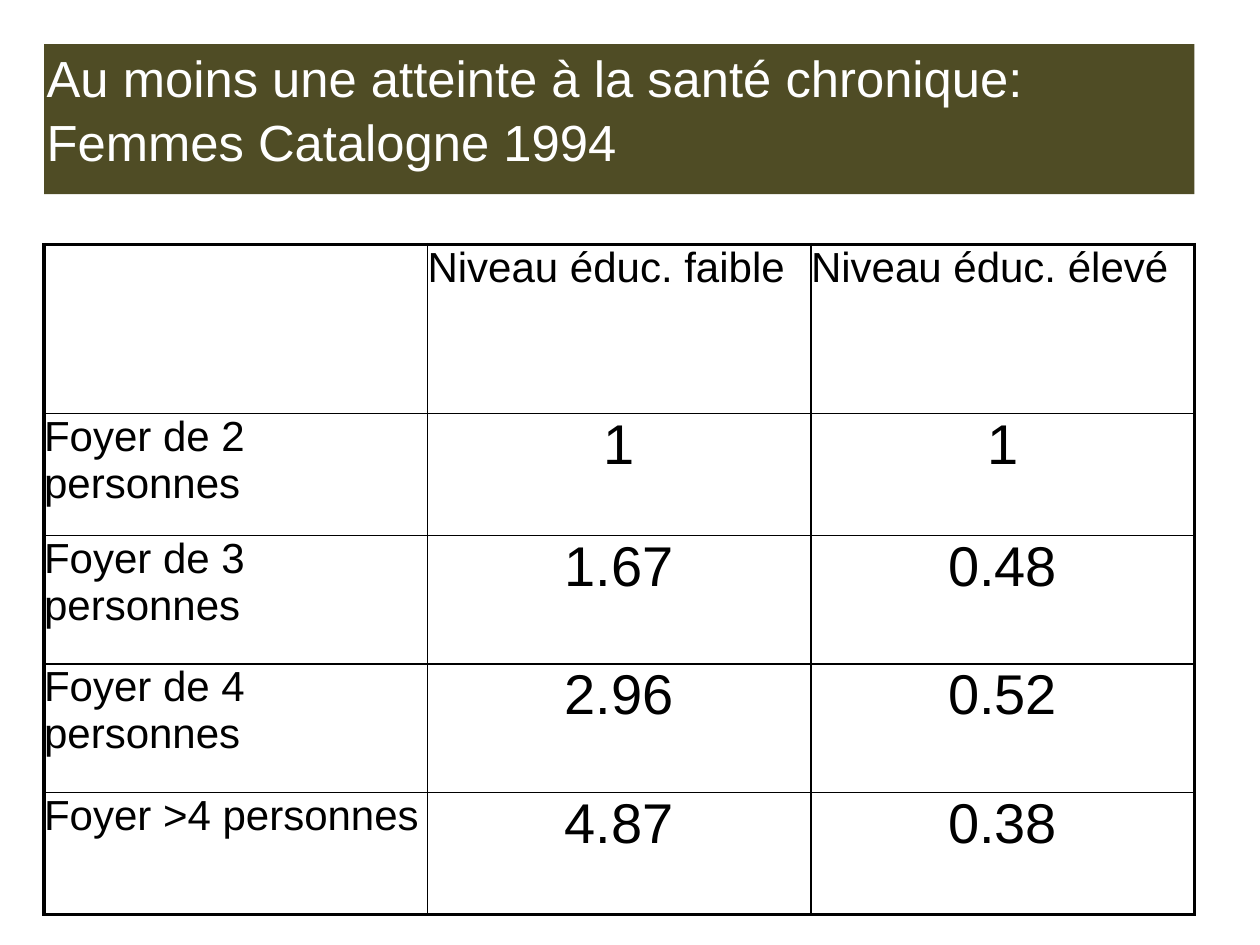
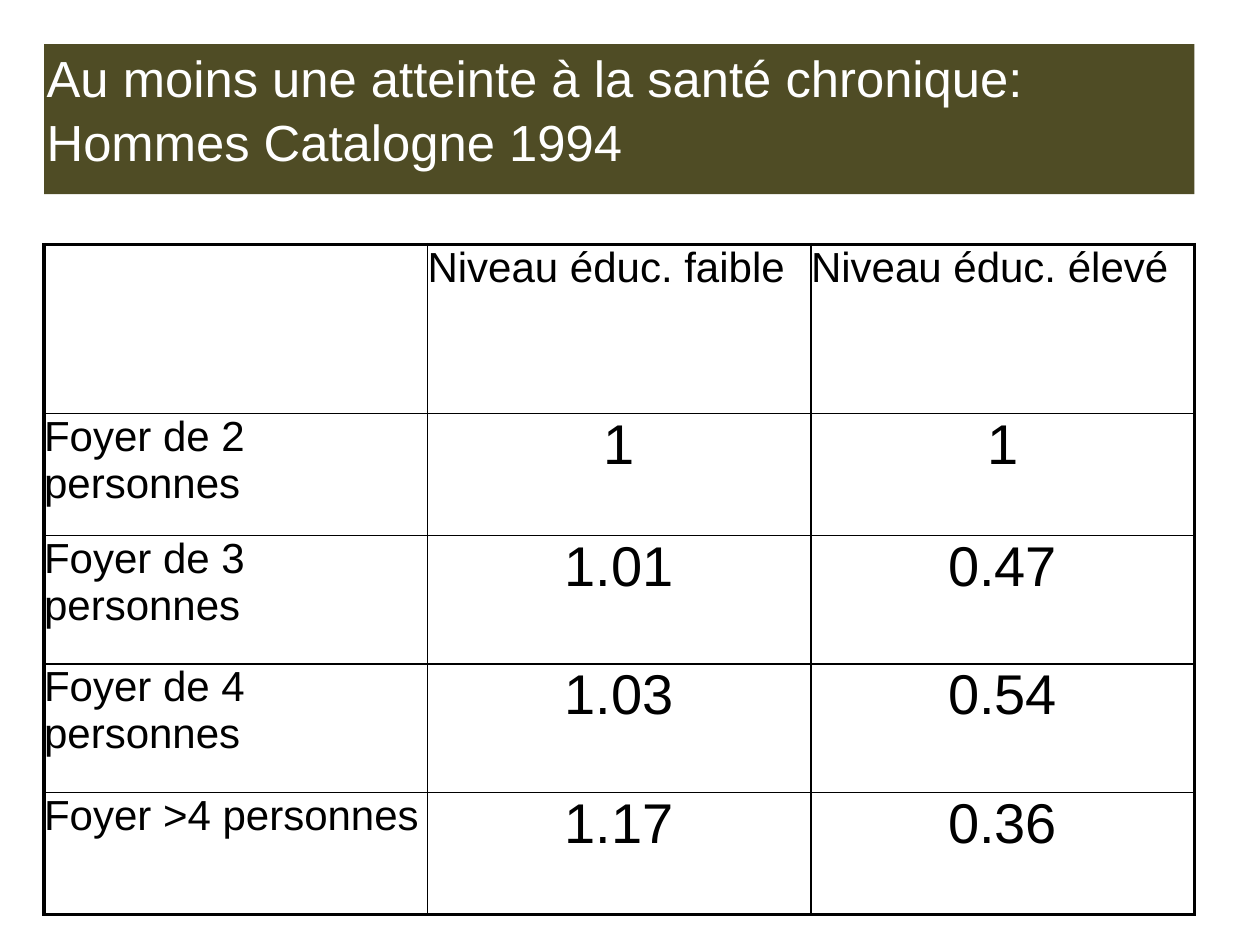
from lxml import etree
from pptx import Presentation
from pptx.dml.color import RGBColor
from pptx.enum.text import MSO_ANCHOR, MSO_AUTO_SIZE, PP_ALIGN
from pptx.oxml.ns import qn
from pptx.util import Inches, Pt

LEFT, CENTER = PP_ALIGN.LEFT, PP_ALIGN.CENTER
TOP, NO_FIT = MSO_ANCHOR.TOP, MSO_AUTO_SIZE.NONE

# Shared look
OLIVE, WHITE, BLACK = "4F4C25", "FFFFFF", "000000"
MARGIN_LEFT, CONTENT_WIDTH = 0.35, 9.13
ROW_HEIGHTS = [1.34, 0.97, 1.02, 1.02, 0.97]
OUTER_LINE, INNER_LINE = 2.25, 1
TITLE_FORMAT = {"name": "Arial", "size": Pt(29), "bold": False}
LABEL_FORMAT = {"name": "Arial", "size": Pt(24), "bold": False}
VALUE_FORMAT = {"name": "Arial", "size": Pt(32), "bold": False}

# Slide content
TITLE = "Au moins une atteinte à la santé chronique: {} Catalogne 1994"
HEADER = ["", "Niveau éduc. faible", "Niveau éduc. élevé"]
HOUSEHOLDS = ["Foyer de 2 personnes", "Foyer de 3 personnes",
              "Foyer de 4 personnes", "Foyer >4 personnes"]
RATIOS = {
    "Femmes": [("1", "1"), ("1.67", "0.48"), ("2.96", "0.52"), ("4.87", "0.38")],
    "Hommes": [("1", "1"), ("1.01", "0.47"), ("1.03", "0.54"), ("1.17", "0.36")],
}


def color(hex_string):
    return RGBColor.from_string(hex_string)


def write(para, text, formats, font_color, alignment):
    para.alignment = alignment
    span = para.add_run()
    span.text = text
    for name, value in formats.items():
        setattr(span.font, name, value)
    span.font.color.rgb = color(font_color)


deck = Presentation()
deck.slide_width, deck.slide_height = Inches(10), Inches(7.5)
title_only = deck.slide_layouts[5]

for group, ratios in RATIOS.items():
    page = deck.slides.add_slide(title_only)

    # Title band
    band = page.shapes.title
    band.left, band.top = Inches(MARGIN_LEFT), Inches(0.35)
    band.width, band.height = Inches(CONTENT_WIDTH), Inches(1.19)
    band.fill.solid()
    band.fill.fore_color.rgb = color(OLIVE)
    frame = band.text_frame
    frame.auto_size, frame.word_wrap = NO_FIT, True
    frame.vertical_anchor = TOP
    frame.margin_left = frame.margin_right = Inches(0.02)
    frame.margin_top = frame.margin_bottom = 0
    frame.paragraphs[0].line_spacing = 1.05
    write(frame.paragraphs[0], TITLE.format(group), TITLE_FORMAT, WHITE, LEFT)

    # Table of ratios by household and education level
    rows = [HEADER] + [[home, *pair] for home, pair in zip(HOUSEHOLDS, ratios)]
    last_row, last_column = len(rows) - 1, len(HEADER) - 1
    table = page.shapes.add_table(
        len(rows), len(HEADER), Inches(MARGIN_LEFT), Inches(1.94),
        Inches(CONTENT_WIDTH), Inches(sum(ROW_HEIGHTS))).table
    table.first_row = table.horz_banding = False
    for row, height in zip(table.rows, ROW_HEIGHTS):
        row.height = Inches(height)

    for r, texts in enumerate(rows):
        for c, text in enumerate(texts):
            cell = table.cell(r, c)
            cell.margin_left = cell.margin_right = 0
            cell.margin_top = cell.margin_bottom = 0
            cell.vertical_anchor = TOP

            # Thick outer frame, thin inner lines
            outer_edges = {"a:lnL": c == 0, "a:lnR": c == last_column,
                           "a:lnT": r == 0, "a:lnB": r == last_row}
            for tag, is_outer in outer_edges.items():
                width = Pt(OUTER_LINE if is_outer else INNER_LINE)
                line = etree.SubElement(cell._tc.get_or_add_tcPr(), qn(tag), w=str(width))
                fill = etree.SubElement(line, qn("a:solidFill"))
                etree.SubElement(fill, qn("a:srgbClr"), val=BLACK)
            cell.fill.background()

            is_value = r > 0 and c > 0
            if text:
                write(cell.text_frame.paragraphs[0], text,
                      VALUE_FORMAT if is_value else LABEL_FORMAT, BLACK,
                      CENTER if is_value else LEFT)

deck.save("out.pptx")
